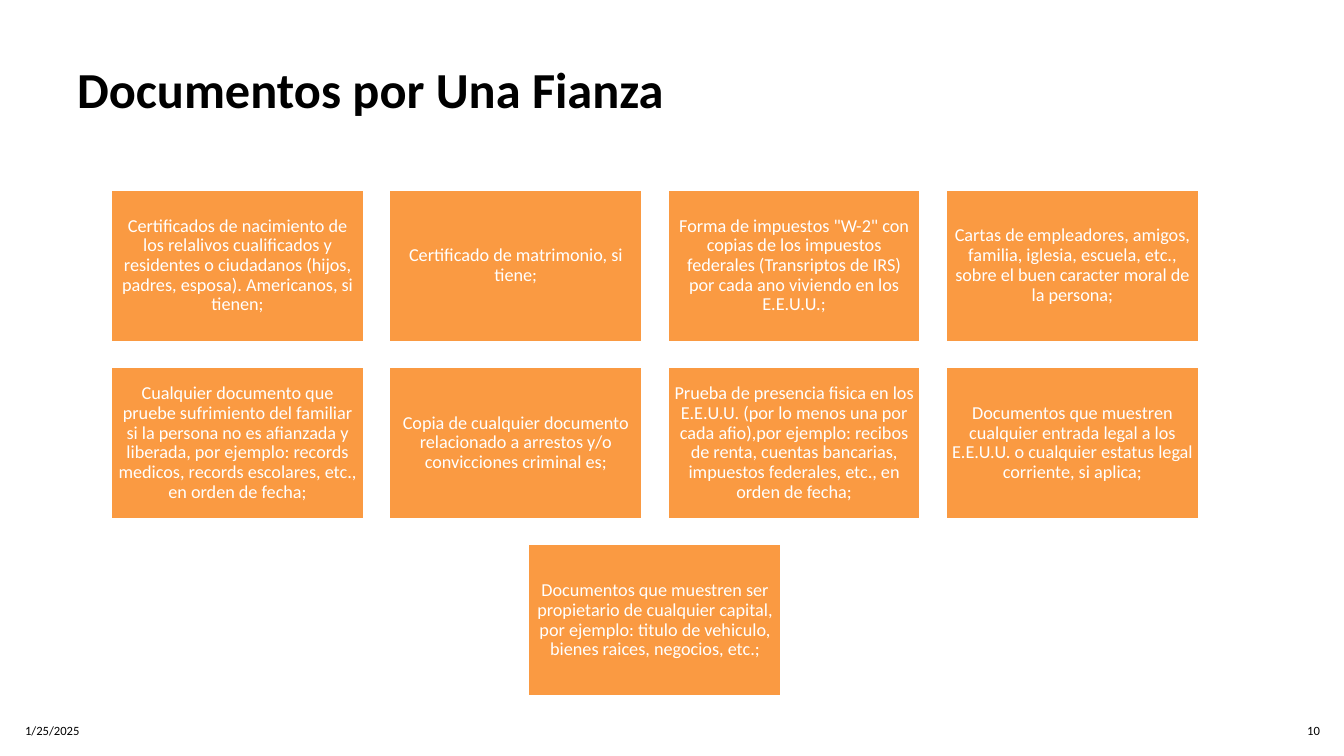
from dataclasses import dataclass

from pptx import Presentation
from pptx.dml.color import RGBColor
from pptx.enum.shapes import MSO_SHAPE
from pptx.enum.text import MSO_ANCHOR, PP_ALIGN
from pptx.util import Inches, Pt

RECT = MSO_SHAPE.RECTANGLE
TOP, MIDDLE = MSO_ANCHOR.TOP, MSO_ANCHOR.MIDDLE
LEFT, CENTER, RIGHT = PP_ALIGN.LEFT, PP_ALIGN.CENTER, PP_ALIGN.RIGHT


@dataclass(frozen=True)
class Theme:
    font: str = "Calibri"
    ink: RGBColor = RGBColor(0x00, 0x00, 0x00)
    paper: RGBColor = RGBColor(0xFF, 0xFF, 0xFF)
    accent: RGBColor = RGBColor(0xFA, 0x9A, 0x42)
    title_size: int = 36
    card_size: int = 13
    footer_size: int = 9
    border: float = 1.5
    spacing: float = 0.9


@dataclass(frozen=True)
class Grid:
    left: float = 1.1
    top: float = 1.88
    columns: int = 4
    card_width: float = 2.51
    card_height: float = 1.51
    gap: float = 0.25

    def cell(self, column, row):
        x = self.left + column * (self.card_width + self.gap)
        y = self.top + row * (self.card_height + self.gap)
        return [Inches(v) for v in (x, y, self.card_width, self.card_height)]


class Deck:
    def __init__(self, prs, theme, grid):
        self.prs, self.theme, self.grid = prs, theme, grid
        self.s = prs.slides.add_slide(prs.slide_layouts[6])

    def set_text(self, sp, text, font, frame, paragraph):
        tf = sp.text_frame
        p = tf.paragraphs[0]
        r = p.add_run()
        r.text = text
        formats = (
            (tf, {"word_wrap": True, **frame}),
            (p, paragraph),
            (r.font, {"name": self.theme.font, **font}),
        )
        for target, values in formats:
            for name, value in values.items():
                if name == "color":
                    target.color.rgb = value
                else:
                    setattr(target, name, value)

    def text(self, text, x, y, w, h, size, anchor=MIDDLE, align=LEFT, bold=False):
        width, height = self.prs.slide_width, self.prs.slide_height
        box = [int(total * share / 100) for total, share in
               ((width, x), (height, y), (width, w), (height, h))]
        sp = self.s.shapes.add_textbox(*box)
        font = {"size": Pt(size), "bold": bold, "color": self.theme.ink}
        paragraph = {"alignment": align, "line_spacing": self.theme.spacing}
        self.set_text(sp, text, font, {"vertical_anchor": anchor}, paragraph)

    def card(self, text, column, row):
        sp = self.s.shapes.add_shape(RECT, *self.grid.cell(column, row))
        sp.shadow.inherit = False
        sp.fill.solid()
        sp.fill.fore_color.rgb = self.theme.accent
        sp.line.color.rgb = self.theme.paper
        sp.line.width = Pt(self.theme.border)
        margins = ("margin_left", "margin_top", "margin_right", "margin_bottom")
        frame = {"vertical_anchor": MIDDLE, **dict.fromkeys(margins, Inches(0.05))}
        font = {"size": Pt(self.theme.card_size), "color": self.theme.paper}
        paragraph = {"alignment": CENTER, "line_spacing": self.theme.spacing}
        self.set_text(sp, text, font, frame, paragraph)

    def cards(self, texts):
        columns = self.grid.columns
        for i, text in enumerate(texts):
            row, column = divmod(i, columns)
            in_row = min(columns, len(texts) - row * columns)
            self.card(text, column + (columns - in_row) / 2, row)


DOCUMENTS = [
    "Certificados de nacimiento de los relalivos cualificados y residentes o "
    "ciudadanos (hijos, padres, esposa). Americanos, si tienen;",
    "Certificado de matrimonio, si tiene;",
    'Forma de impuestos "W-2" con copias de los impuestos federales '
    "(Transriptos de IRS) por cada ano viviendo en los E.E.U.U.;",
    "Cartas de empleadores, amigos, familia, iglesia, escuela, etc., sobre el "
    "buen caracter moral de la persona;",
    "Cualquier documento que pruebe sufrimiento del familiar si la persona no es "
    "afianzada y liberada, por ejemplo: records medicos, records escolares, etc., "
    "en orden de fecha;",
    "Copia de cualquier documento relacionado a arrestos y/o convicciones "
    "criminal es;",
    "Prueba de presencia fisica en los E.E.U.U. (por lo menos una por cada "
    "afio),por ejemplo: recibos de renta, cuentas bancarias, impuestos federales, "
    "etc., en orden de fecha;",
    "Documentos que muestren cualquier entrada legal a los E.E.U.U. o cualquier "
    "estatus legal corriente, si aplica;",
    "Documentos que muestren ser propietario de cualquier capital, por ejemplo: "
    "titulo de vehiculo, bienes raices, negocios, etc.;",
]


def main():
    prs = Presentation()
    prs.slide_width, prs.slide_height = Inches(13.33), Inches(7.5)
    theme = Theme()
    deck = Deck(prs, theme, Grid())
    deck.text("Documentos por Una Fianza", 5, 8, 87.4, 16.5,
              theme.title_size, anchor=TOP, bold=True)
    deck.text("1/25/2025", 1.13, 94.13, 28.66, 5.33, theme.footer_size)
    deck.text("10", 95.42, 94.13, 3.53, 5.33, theme.footer_size, align=RIGHT)
    deck.cards(DOCUMENTS)
    prs.save("out.pptx")


if __name__ == "__main__":
    main()
